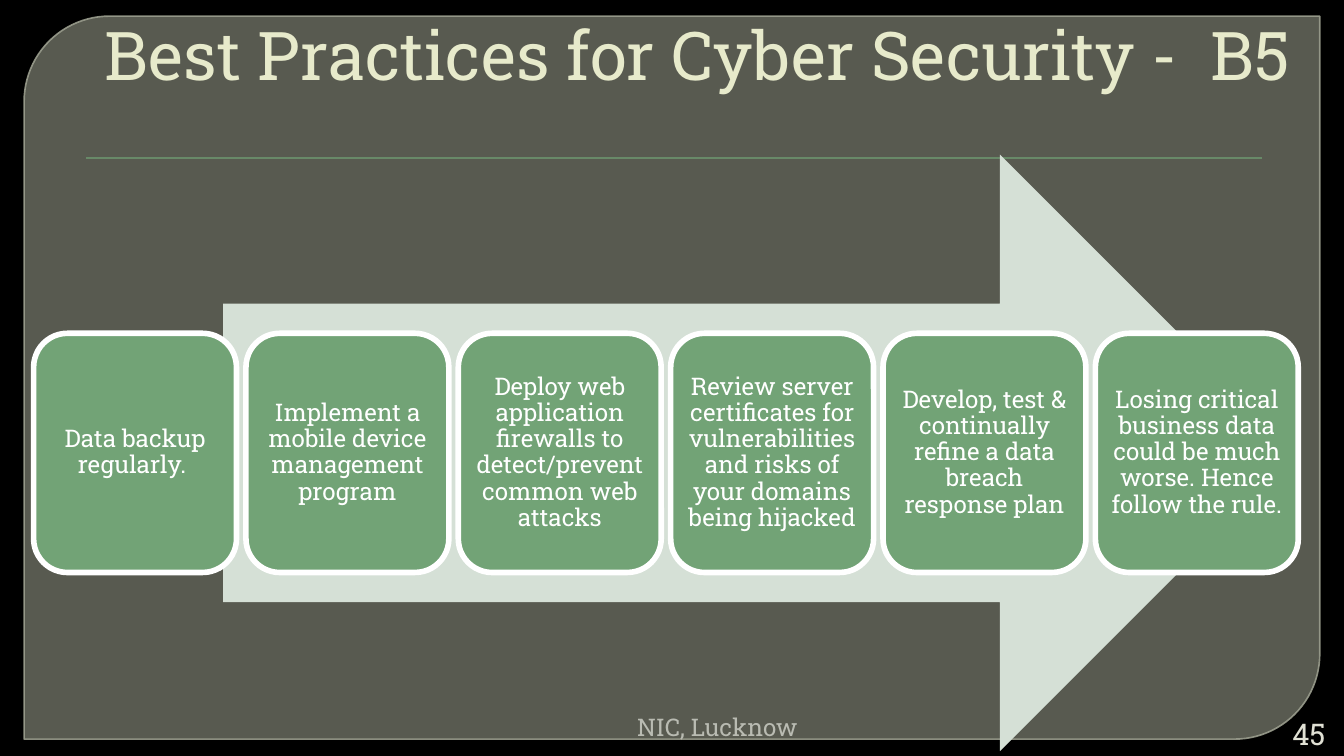
from lxml import etree
from pptx import Presentation
from pptx.dml.color import RGBColor
from pptx.enum import shapes, text
from pptx.oxml.ns import qn
from pptx.util import Inches, Pt

FONT = "Roboto Slab"
BLACK = RGBColor(0x00, 0x00, 0x00)
WHITE = RGBColor(0xFF, 0xFF, 0xFF)
PANEL = RGBColor(0x88, 0x8B, 0x7B)
EDGE = RGBColor(0x9D, 0xA0, 0x90)
GREEN = RGBColor(0x72, 0xA3, 0x76)
PALE = RGBColor(0xD5, 0xE0, 0xD6)
CREAM = RGBColor(0xE7, 0xEA, 0xCB)
GREY = RGBColor(0xB9, 0xBB, 0xB2)
LIGHT = RGBColor(0xE0, 0xE0, 0xD4)

STEPS = [
    "Data backup regularly. ",
    "Implement a mobile device management program",
    "Deploy web application firewalls to detect/prevent common web attacks",
    "Review server certificates for vulnerabilities and risks of "
    "your domains being hijacked",
    "Develop, test & continually refine a data breach response plan",
    "Losing critical business data could be much worse. Hence follow the rule.",
]
LEFT, TOP, PITCH = 0.25, 2.48, 1.58
WIDE, HIGH = 1.51, 1.78
INSET = 0.07

KIND = shapes.MSO_SHAPE
ALIGN = text.PP_ALIGN
ANCHOR = text.MSO_ANCHOR


def fade(fill, pct):
    """Make a solid fill pct percent opaque."""
    tint = fill._xPr.find(qn("a:solidFill"))[0]
    etree.SubElement(tint, qn("a:alpha"), val=str(pct * 1000))


def add_form(slide, kind, box, color, edge=None, width=1):
    form = slide.shapes.add_shape(kind, *map(Inches, box))
    form.shadow.inherit = False
    form.fill.solid()
    form.fill.fore_color.rgb = color
    if edge is None:
        form.line.fill.background()
    else:
        form.line.color.rgb = edge
        form.line.width = Pt(width)
    return form


def add_label(slide, box, words, size, color, anchor,
              align=ALIGN.RIGHT, pads=(0.1, 0.05)):
    """Add a one-paragraph text box; pads are the side and the end margins."""
    label = slide.shapes.add_textbox(*map(Inches, box))
    frame = label.text_frame
    frame.word_wrap = True
    frame.vertical_anchor = anchor
    side, end = map(Inches, pads)
    frame.margin_left = frame.margin_right = side
    frame.margin_top = frame.margin_bottom = end
    para = frame.paragraphs[0]
    para.text = words
    para.alignment = align
    para.font.name = FONT
    para.font.size = Pt(size)
    para.font.color.rgb = color
    return para


def add_panel(slide):
    panel = add_form(slide, KIND.ROUND_2_DIAG_RECTANGLE,
                     (0.18, 0.12, 9.64, 5.38), PANEL, EDGE, 0.87)
    panel.adjustments[0] = 0.118
    panel.adjustments[1] = 0
    fade(panel.fill, 65)
    fade(panel.line.fill, 88)
    add_form(slide, KIND.RECTANGLE, (0.64, 1.17, 8.75, 0.01), GREEN)


def add_step(slide, left, words):
    add_form(slide, KIND.ROUNDED_RECTANGLE, (left, TOP, WIDE, HIGH),
             GREEN, WHITE, 3)
    box = (left + INSET, TOP + INSET, WIDE - 2 * INSET, HIGH - 2 * INSET)
    para = add_label(slide, box, words, 13, WHITE, ANCHOR.MIDDLE,
                     ALIGN.CENTER, (0.05, 0.05))
    para.line_spacing = 0.9


def main():
    deck = Presentation()
    deck.slide_width = Inches(10)
    deck.slide_height = deck.slide_width * 9 // 16
    slide = deck.slides.add_slide(deck.slide_layouts[6])
    back = slide.background.fill
    back.solid()
    back.fore_color.rgb = BLACK

    add_panel(slide)
    add_label(slide, (0.58, 0.23, 9.25, 0.52),
              "Best Practices for Cyber Security -  B5 ", 36, CREAM,
              ANCHOR.BOTTOM)
    add_form(slide, KIND.RIGHT_ARROW, (1.66, 1.15, 8, 4.44), PALE)
    for i, words in enumerate(STEPS):
        add_step(slide, LEFT + i * PITCH, words)
    add_label(slide, (1.42, 5.25, 4.61, 0.23), "NIC, Lucknow", 13, GREY,
              ANCHOR.TOP)
    add_label(slide, (9.45, 5.34, 0.51, 0.23), "45", 16, LIGHT, ANCHOR.MIDDLE)
    deck.save("out.pptx")


if __name__ == "__main__":
    main()
